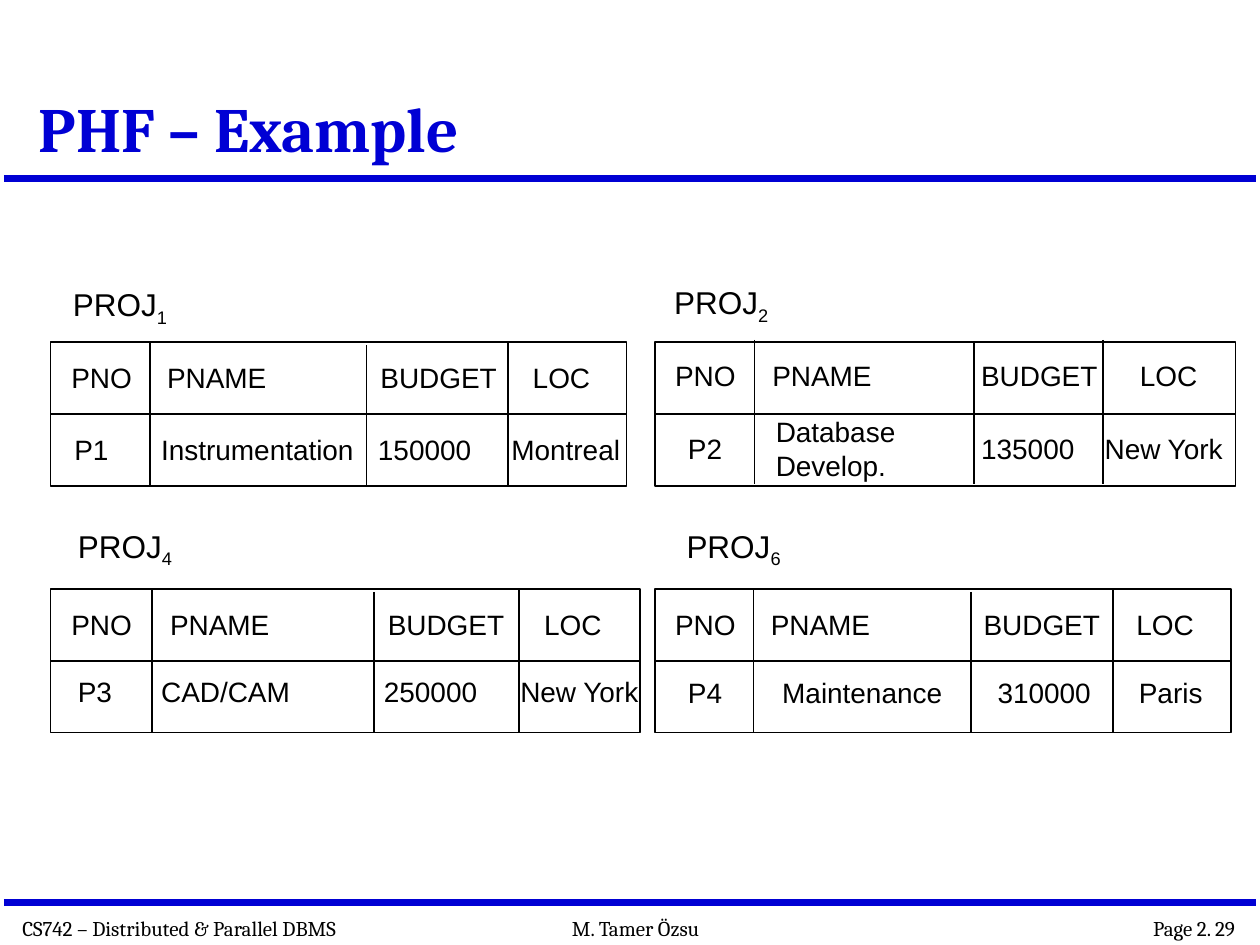
"""Build the PHF example slide with four horizontal fragments of PROJ."""
from dataclasses import dataclass

from lxml import etree
from pptx import Presentation
from pptx.dml.color import RGBColor
from pptx.enum.shapes import MSO_CONNECTOR, MSO_SHAPE
from pptx.enum.text import MSO_ANCHOR, MSO_AUTO_SIZE, PP_ALIGN
from pptx.oxml.ns import qn
from pptx.util import Cm, Pt

STRAIGHT = MSO_CONNECTOR.STRAIGHT
RECTANGLE = MSO_SHAPE.RECTANGLE
TOP, BOTTOM = MSO_ANCHOR.TOP, MSO_ANCHOR.BOTTOM
GROW, FIXED = MSO_AUTO_SIZE.SHAPE_TO_FIT_TEXT, MSO_AUTO_SIZE.NONE
LEFT, RIGHT = PP_ALIGN.LEFT, PP_ALIGN.RIGHT
LEFT_SIDE, RIGHT_SIDE = 1, 3


@dataclass(frozen=True)
class Theme:
    ink: RGBColor = RGBColor(0, 0, 0)
    paper: RGBColor = RGBColor(255, 255, 255)
    accent: RGBColor = RGBColor(0, 0, 0xD4)
    serif: str = "Cambria"
    sans: str = "Arial"
    title: int = 36
    label: int = 18
    cell: int = 16
    footer: int = 12
    rule: int = 4
    border: int = 1


@dataclass(frozen=True)
class Fragment:
    number: str
    label_at: tuple
    left: float
    top: float
    width: float
    dividers: tuple
    divider_shift: float
    header_lefts: tuple
    header_middle: float
    values: tuple
    value_middle: float


HEADERS = (("PNO", 1.75), ("PNAME", 2.55), ("BUDGET", 2.95), ("LOC", 1.75))
TABLE_HEIGHT = 2.9
LINE_HEIGHT = 0.69
CELL_PADDING = 0.22
LABEL_SIZE = (2.44, 1.02)

FRAGMENTS = (
    Fragment("1", (1.22, 5.62), 1.02, 6.9, 11.61, (3.02, 7.39, 10.24), 0,
             (1.19, 3.12, 7.42, 10.49), 7.6,
             (("P1", 1.25, 1.2), ("Instrumentation", 3, 4.39),
              ("150000", 7.37, 2.4), ("Montreal", 10.06, 2.74)), 9.05),
    Fragment("2", (13.34, 5.58), 13.2, 6.9, 11.71, (15.21, 19.63, 22.23), -0.05,
             (13.36, 15.32, 19.53, 22.73), 7.56,
             (("P2", 13.62, 1.2), ("Database\nDevelop.", 15.39, 2.92),
              ("135000", 19.53, 2.4), ("New York", 22.02, 2.95)), 9.04),
    Fragment("4", (1.32, 10.49), 1.02, 11.87, 11.89, (3.07, 7.54, 10.46), 0,
             (1.19, 3.18, 7.57, 10.72), 12.58,
             (("P3", 1.32, 1.35), ("CAD/CAM", 3, 3.1),
              ("250000", 7.49, 2.4), ("New York", 10.24, 3.1)), 13.93),
    Fragment("6", (13.59, 10.49), 13.2, 11.87, 11.61, (15.19, 19.58, 22.43), 0,
             (13.36, 15.29, 19.58, 22.66), 12.58,
             (("P4", 13.62, 1.2), ("Maintenance", 15.52, 3.73),
              ("310000", 19.86, 2.4), ("Paris", 22.71, 1.88)), 13.95),
)


class SlideBuilder:
    def __init__(self, page, theme):
        self.page = page
        self.theme = theme

    def text(self, content, left, top, width, height, size, font, color=None,
             bold=False, align=LEFT, anchor=TOP, wrap=False, spacing=None, subscript=""):
        box = self.page.shapes.add_textbox(Cm(left), Cm(top), Cm(width), Cm(height))
        frame = box.text_frame
        frame.word_wrap = wrap
        frame.auto_size = FIXED if wrap else GROW
        frame.vertical_anchor = anchor
        for index, line in enumerate(content.split("\n")):
            para = frame.add_paragraph() if index else frame.paragraphs[0]
            para.alignment = align
            para.line_spacing = spacing
            for part in filter(None, (line, subscript)):
                span = para.add_run()
                span.text = part
                span.font.size = Pt(size)
                span.font.name = font
                span.font.bold = bold
                span.font.color.rgb = color or self.theme.ink
            if subscript:
                span.font._element.set("baseline", "-25000")

    def line(self, start, end, color, weight):
        points = [Cm(value) for value in (*start, *end)]
        connector = self.page.shapes.add_connector(STRAIGHT, *points)
        connector.line.color.rgb = color
        connector.line.width = Pt(weight)
        etree.SubElement(connector._element.spPr, qn("a:effectLst"))
        return connector

    def frame(self, left, top, width, height):
        box = self.page.shapes.add_shape(
            RECTANGLE, Cm(left), Cm(top), Cm(width), Cm(height))
        box.shadow.inherit = False
        box.fill.solid()
        box.fill.fore_color.rgb = self.theme.paper
        box.line.color.rgb = self.theme.ink
        box.line.width = Pt(self.theme.border)
        return box

    def cell(self, content, left, middle, width):
        height = CELL_PADDING + LINE_HEIGHT * len(content.split("\n"))
        self.text(content, left, middle - height / 2, width, height,
                  self.theme.cell, self.theme.sans)

    def fragment(self, data):
        theme = self.theme
        self.text("PROJ", *data.label_at, *LABEL_SIZE, theme.label, theme.sans,
                  subscript=data.number)
        box = self.frame(data.left, data.top, data.width, TABLE_HEIGHT)
        middle = data.top + TABLE_HEIGHT / 2
        row_line = self.line((data.left, middle), (data.left + data.width, middle),
                             theme.ink, theme.border)
        row_line.begin_connect(box, LEFT_SIDE)
        row_line.end_connect(box, RIGHT_SIDE)
        top = data.top + data.divider_shift
        for x, drop in zip(data.dividers, (0, 0.06, 0)):
            self.line((x, top + drop), (x, top + TABLE_HEIGHT), theme.ink, theme.border)
        for (name, width), left in zip(HEADERS, data.header_lefts):
            self.cell(name, left, data.header_middle, width)
        for value, left, width in data.values:
            self.cell(value, left, data.value_middle, width)

    def furniture(self):
        theme = self.theme
        for y in (3.6, 18.2):
            self.line((0.08, y), (25.32, y), theme.accent, theme.rule)
        for content, left, width, align in (
                ("CS742 – Distributed & Parallel DBMS", 0.2, 8.13, LEFT),
                ("Page 2. 29", 22.61, 2.54, RIGHT),
                ("M. Tamer Özsu", 11.28, 3.53, LEFT)):
            self.text(content, left, 18.34, width, 0.76, theme.footer, theme.serif,
                      align=align)

    def title(self, content):
        theme = self.theme
        self.text(content, 0.53, 0.3, 19.89, 3.18, theme.title, theme.serif,
                  theme.accent, bold=True, anchor=BOTTOM, wrap=True, spacing=0.9)


def main():
    deck = Presentation()
    deck.slide_width, deck.slide_height = Cm(25.4), Cm(19.05)
    page = deck.slides.add_slide(deck.slide_layouts[6])
    builder = SlideBuilder(page, Theme())
    builder.furniture()
    builder.title("PHF – Example")
    for data in FRAGMENTS:
        builder.fragment(data)
    deck.save("out.pptx")


if __name__ == "__main__":
    main()
